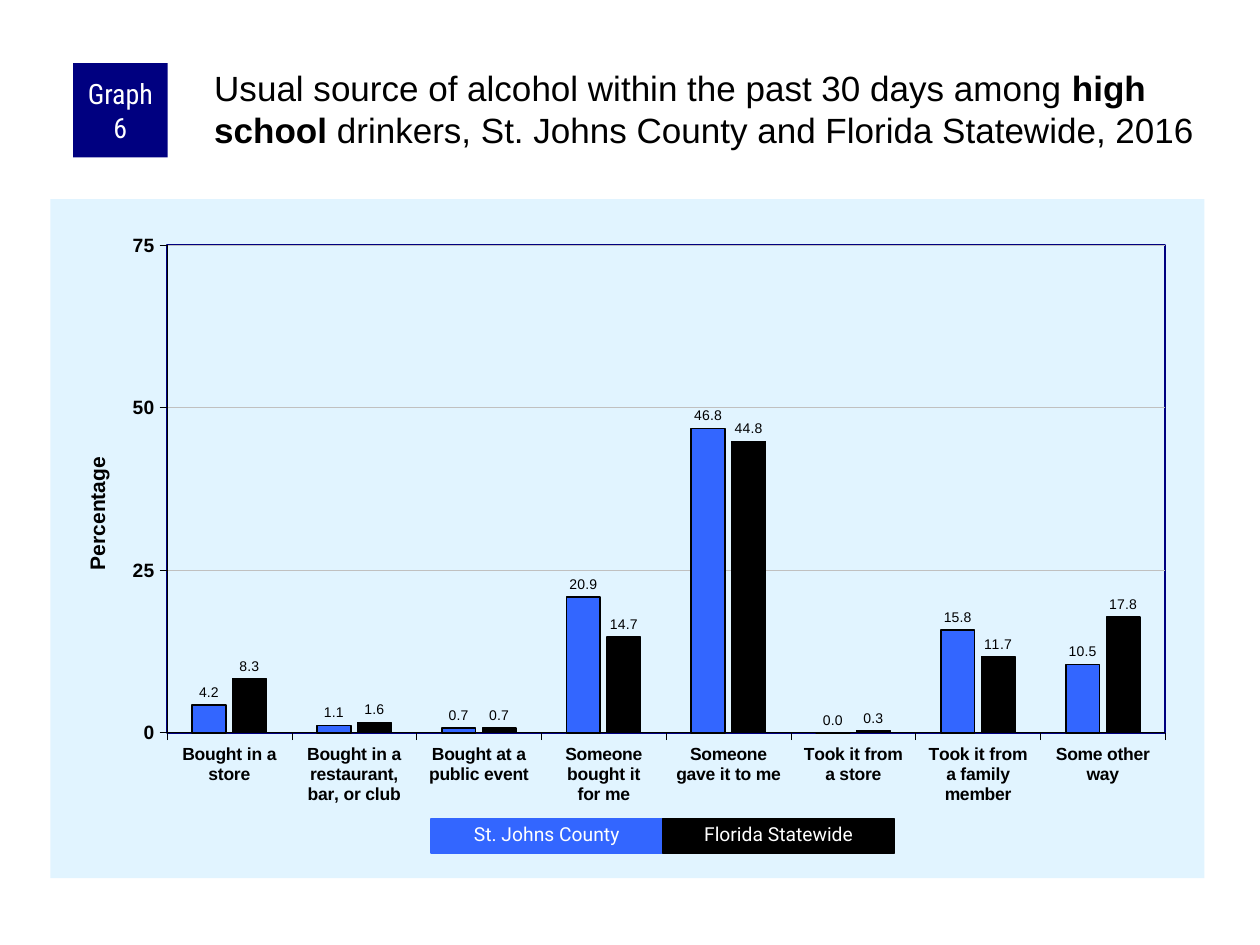
from lxml import etree
from pptx import Presentation
from pptx import util as u
from pptx.chart.data import CategoryChartData
from pptx.dml.color import RGBColor
from pptx.enum import chart as ch, shapes, text
from pptx.oxml import parse_xml
from pptx.oxml.ns import nsdecls, qn

COLORS = {"black": "000000", "white": "FFFFFF", "navy": "000080",
          "blue": "3366FF", "pale": "E1F4FF", "grid": "C0C0C0"}
SOURCES = [("Bought in a store", 4.2, 8.3),
           ("Bought in a restaurant, bar, or club", 1.1, 1.6),
           ("Bought at a public event", 0.7, 0.7),
           ("Someone bought it\nfor me", 20.9, 14.7),
           ("Someone\ngave it to me", 46.8, 44.8),
           ("Took it from\na store", 0, 0.3),
           ("Took it from\na family member", 15.8, 11.7),
           ("Some other way", 10.5, 17.8)]
SERIES = [("St. Johns County", "blue", 1), ("Florida Statewide", "black", 0.75)]


def rgb(name):
    return RGBColor.from_string(COLORS[name])


def box(*lengths):
    return [u.Inches(n) for n in lengths]


def set_font(font, size, name="Arial", color="black", bold=False):
    font.size, font.name, font.bold = u.Pt(size), name, bold
    font.color.rgb = rgb(color)


def set_line(line, color, width):
    line.color.rgb = rgb(color)
    line.width = u.Pt(width)


def set_layout(parent, index, inner=False, **fractions):
    for old in parent.findall(qn("c:layout")):
        parent.remove(old)
    layout = etree.Element(qn("c:layout"))
    manual = etree.SubElement(layout, qn("c:manualLayout"))
    values = {"layoutTarget": "inner"} if inner else {}
    values.update(xMode="edge", yMode="edge", **fractions)
    for tag, value in values.items():
        etree.SubElement(manual, qn("c:" + tag), val=str(value))
    parent.insert(index, layout)


def chart_area(fill="", line=""):
    return parse_xml(f'<c:spPr {nsdecls("c", "a")}>{fill}{line}</c:spPr>')


def solid(name):
    return f'<a:solidFill><a:srgbClr val="{COLORS[name]}"/></a:solidFill>'


class Deck:
    def __init__(self):
        self.prs = Presentation()
        self.prs.slide_width, self.prs.slide_height = box(10, 7.5)
        self.s = self.prs.slides.add_slide(self.prs.slide_layouts[5])

    def title(self, place, runs):
        sp = self.s.shapes.title
        sp.left, sp.top, sp.width, sp.height = box(*place)
        tf = sp.text_frame
        tf.word_wrap = True
        tf.auto_size = text.MSO_AUTO_SIZE.NONE
        tf.vertical_anchor = text.MSO_ANCHOR.TOP
        tf.margin_left, tf.margin_top, tf.margin_right, tf.margin_bottom = box(0.03, 0.03, 0, 0)
        p = tf.paragraphs[0]
        p.alignment = text.PP_ALIGN.LEFT
        for words, bold in runs:
            r = p.add_run()
            r.text = words
            set_font(r.font, 20, bold=bold)

    def label(self, place, words, fill, size, font, line=None, margins=None, spacing=None):
        sp = self.s.shapes.add_shape(shapes.MSO_SHAPE.RECTANGLE, *box(*place))
        sp.shadow.inherit = False
        sp.fill.solid()
        sp.fill.fore_color.rgb = rgb(fill)
        if line:
            set_line(sp.line, fill, line)
        else:
            sp.line.fill.background()
        tf = sp.text_frame
        tf.word_wrap = True
        if margins:
            tf.margin_left, tf.margin_top, tf.margin_right, tf.margin_bottom = box(*margins)
        else:
            tf.vertical_anchor = text.MSO_ANCHOR.TOP
            tf.auto_size = text.MSO_AUTO_SIZE.SHAPE_TO_FIT_TEXT
        p = tf.paragraphs[0]
        p.text = words
        p.alignment = text.PP_ALIGN.CENTER
        p.line_spacing = spacing
        set_font(p.font, size, font, "white")

    def columns(self, place):
        data = CategoryChartData(number_format="0.0")
        data.categories = [row[0] for row in SOURCES]
        for i, (name, _, _) in enumerate(SERIES, 1):
            data.add_series(name, [row[i] for row in SOURCES])
        chart = self.s.shapes.add_chart(
            ch.XL_CHART_TYPE.COLUMN_CLUSTERED, *box(*place), data).chart
        chart.has_legend = chart.has_title = False
        set_font(chart.font, 11.5)
        plot = chart.plots[0]
        plot.gap_width, plot.overlap, plot.vary_by_categories = 150, -20, False
        for series, (_, color, width) in zip(plot.series, SERIES):
            series.format.fill.solid()
            series.format.fill.fore_color.rgb = rgb(color)
            set_line(series.format.line, "black", width)
            labels = series.data_labels
            labels.show_value = True
            labels.number_format, labels.number_format_is_linked = "0.0", False
            labels.position = ch.XL_LABEL_POSITION.OUTSIDE_END
            set_font(labels.font, 8)

        for axis, size in ((chart.category_axis, 10), (chart.value_axis, 11)):
            axis.major_tick_mark = ch.XL_TICK_MARK.OUTSIDE
            axis.minor_tick_mark = ch.XL_TICK_MARK.NONE
            set_font(axis.tick_labels.font, size, bold=True)
            set_line(axis.format.line, "black", 0.25)
        axis = chart.value_axis
        axis.minimum_scale, axis.maximum_scale, axis.major_unit = 0, 75, 25
        axis.tick_labels.number_format = "0"
        axis.tick_labels.number_format_is_linked = False
        set_line(axis.major_gridlines.format.line, "grid", 0.25)
        axis_title = axis.axis_title
        p = axis_title.text_frame.paragraphs[0]
        p.text = "Percentage"
        set_font(p.font, 12, bold=True)
        set_layout(axis_title._element, 1, x=0.026, y=0.374)

        space = chart._chartSpace
        area = space.chart.plotArea
        set_layout(area, 0, inner=True, x=0.101, y=0.068, w=0.865, h=0.718)
        area.append(chart_area("<a:noFill/>", f'<a:ln w="12700">{solid("navy")}</a:ln>'))
        space.chart.addnext(chart_area(solid("pale"), "<a:ln><a:noFill/></a:ln>"))


def main():
    deck = Deck()
    deck.columns((0.4, 1.58, 9.16, 5.39))
    deck.label((0.58, 0.5, 0.75, 0.75), "Graph 6", "navy", 16, "Roboto Condensed",
               margins=(0.05, 0, 0.05, 0))
    deck.title((1.67, 0.5, 7.92, 0.83), [
        ("Usual source of alcohol within the past 30 days among ", False),
        ("high school", True),
        (" drinkers, St. Johns County and Florida Statewide, 2016", False)])
    for i, (name, color, _) in enumerate(SERIES):
        deck.label((3.42 + 1.84 * i, 6.5, 1.84, 0.27), name, color, 11, "Roboto",
                   line=0.75, spacing=0.9)
    deck.prs.save("out.pptx")


if __name__ == "__main__":
    main()
